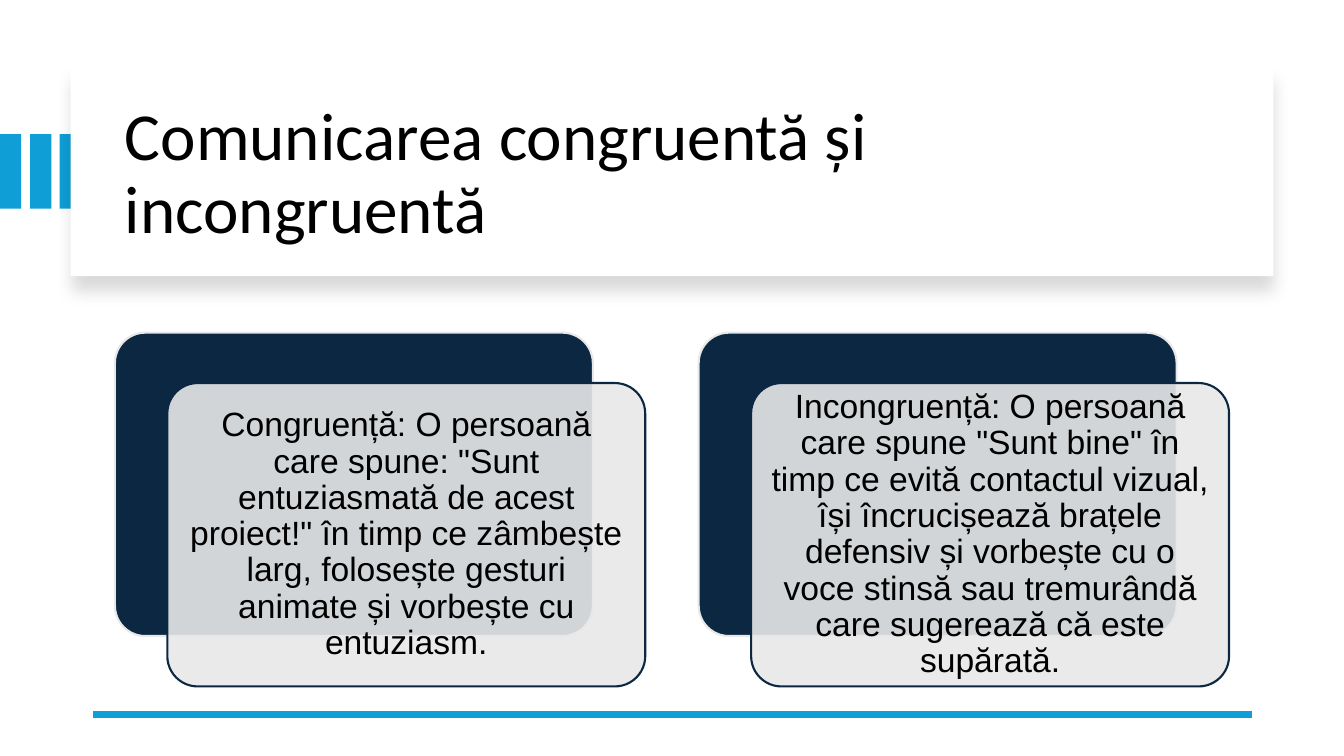
from dataclasses import dataclass

from lxml import etree
from pptx import Presentation
from pptx.dml.color import RGBColor
from pptx.enum.shapes import MSO_CONNECTOR, MSO_SHAPE
from pptx.enum.text import MSO_ANCHOR, PP_ALIGN
from pptx.oxml.ns import qn
from pptx.util import Pt

RECT, ROUNDED = MSO_SHAPE.RECTANGLE, MSO_SHAPE.ROUNDED_RECTANGLE
STRAIGHT = MSO_CONNECTOR.STRAIGHT
MIDDLE = MSO_ANCHOR.MIDDLE
LEFT, CENTER = PP_ALIGN.LEFT, PP_ALIGN.CENTER
PX = 9144  # EMU per px, 100 px to the inch


@dataclass(frozen=True)
class Theme:
    accent: str = "0F9ED5"
    navy: str = "0B2741"
    pale: str = "E8E8E8"
    white: str = "FFFFFF"
    black: str = "000000"
    title_font: str = "Calibri"
    body_font: str = "Arial"
    title_size: int = 48
    body_size: int = 24
    outline: float = 1.5
    rule: float = 4.5


THEME = Theme()
TITLE = "Comunicarea congruentă și incongruentă"
EXAMPLES = [
    'Congruență: O persoană care spune: "Sunt entuziasmată de acest proiect!" '
    "în timp ce zâmbește larg, folosește gesturi animate și vorbește cu entuziasm.",
    'Incongruență: O persoană care spune "Sunt bine" în timp ce evită contactul '
    "vizual, își încrucișează brațele defensiv și vorbește cu o voce stinsă sau "
    "tremurândă care sugerează că este supărată.",
]


def emu(*lengths):
    return [length * PX for length in lengths]


def apply(target, values):
    for name, value in values.items():
        setattr(target, name, value)


def add_block(slide, kind, box, fill, line=None):
    block = slide.shapes.add_shape(kind, *emu(*box))
    block.shadow.inherit = False
    block.fill.solid()
    block.fill.fore_color.rgb = RGBColor.from_string(fill)
    if line:
        block.line.color.rgb = RGBColor.from_string(line)
        block.line.width = Pt(THEME.outline)
    else:
        block.line.fill.background()
    if kind == ROUNDED:
        block.adjustments[0] = 0.1
    return block


def add_text(slide, box, text, font, size, align, inset_y):
    frame = slide.shapes.add_textbox(*emu(*box)).text_frame
    apply(frame, {
        "word_wrap": True, "vertical_anchor": MIDDLE,
        "margin_left": 10 * PX, "margin_right": 10 * PX,
        "margin_top": inset_y * PX, "margin_bottom": inset_y * PX,
    })
    paragraph = frame.paragraphs[0]
    apply(paragraph, {"alignment": align, "line_spacing": 0.9})
    run = paragraph.add_run()
    run.text = text
    apply(run.font, {"name": font, "size": Pt(size)})
    run.font.color.rgb = RGBColor.from_string(THEME.black)


def add_alpha(color, percent):
    etree.SubElement(color, qn("a:alpha"), val=str(percent * 1000))


def set_transparency(block, percent):
    color = block.fill._xPr.find(qn("a:solidFill")).find(qn("a:srgbClr"))
    add_alpha(color, percent)


def drop_shadow(block, blur, distance, opacity):
    effects = block._element.spPr.find(qn("a:effectLst"))
    shadow = etree.SubElement(
        effects, qn("a:outerShdw"), blurRad=str(Pt(blur)), dist=str(Pt(distance)),
        dir="5400000", algn="t", rotWithShape="0")
    add_alpha(etree.SubElement(shadow, qn("a:srgbClr"), val=THEME.black), opacity)


def draw_stripes(slide, box):
    """Three accent bars, spread evenly over the box."""
    left, top, width, height = box
    bar = 21
    for i in range(3):
        x = left + round(i * (width - bar) / 2)
        add_block(slide, RECT, (x, top, bar, height), THEME.accent)


def draw_header(slide, box):
    """White raised panel with the slide title."""
    left, top, width, height = box
    panel = add_block(slide, RECT, box, THEME.white)
    drop_shadow(panel, blur=11, distance=10, opacity=15)
    add_text(slide, (left + 44, top + 22, width - 80, height - 37), TITLE,
             THEME.title_font, THEME.title_size, LEFT, inset_y=5)


def draw_rule(slide, box):
    """Accent line at the foot of the slide."""
    left, top, width, height = box
    rule = slide.shapes.add_connector(
        STRAIGHT, *emu(left + width, top, left, top + height))
    rule.line.color.rgb = RGBColor.from_string(THEME.accent)
    rule.line.width = Pt(THEME.rule)
    etree.SubElement(rule._element.spPr, qn("a:effectLst"))


def draw_example(slide, box, text):
    """Navy card with a translucent text card shifted down and right."""
    left, top, width, height = box
    shift_x, shift_y, pad = 52, 50, 9
    card_w, card_h = width - shift_x, height - shift_y
    x, y = left + shift_x, top + shift_y
    add_block(slide, ROUNDED, (left, top, card_w, card_h), THEME.navy, THEME.pale)
    front = add_block(slide, ROUNDED, (x, y, card_w, card_h), THEME.pale, THEME.navy)
    set_transparency(front, 90)
    add_text(slide, (x + pad, y + pad, card_w - 2 * pad, card_h - 2 * pad), text,
             THEME.body_font, THEME.body_size, CENTER, inset_y=10)


def main():
    deck = Presentation()
    deck.slide_width, deck.slide_height = emu(1333, 750)
    slide = deck.slides.add_slide(deck.slide_layouts[6])

    draw_stripes(slide, (0, 133, 80, 74))
    draw_header(slide, (70, 67, 1193, 207))
    draw_rule(slide, (92, 709, 1150, 0))
    for i, example in enumerate(EXAMPLES):
        draw_example(slide, (114 + i * 579, 330, 526, 351), example)

    deck.save("out.pptx")


if __name__ == "__main__":
    main()
